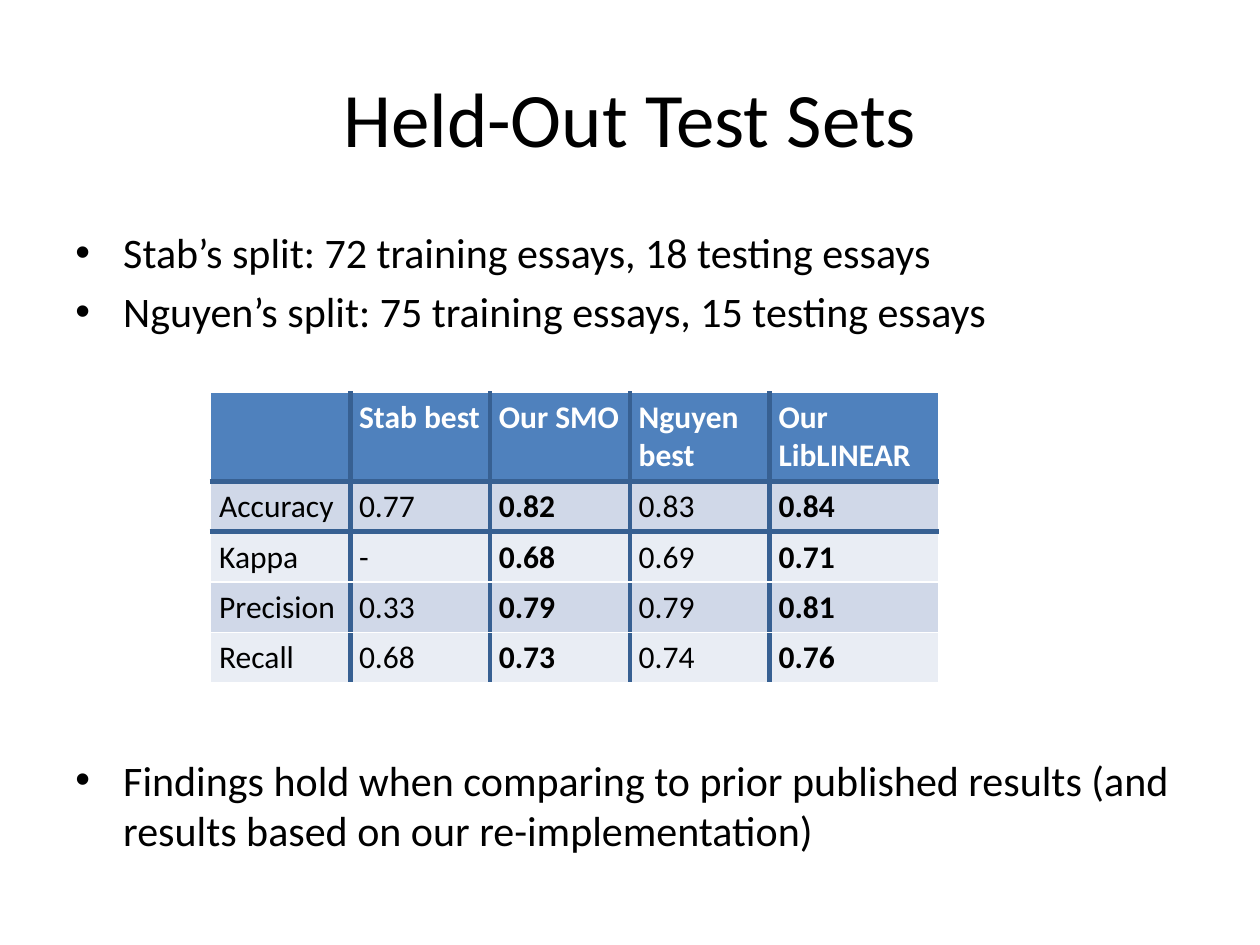
from lxml.etree import SubElement
from pptx import Presentation
from pptx.dml.color import RGBColor
from pptx.enum.text import MSO_ANCHOR, PP_ALIGN
from pptx.oxml.ns import qn
from pptx.util import Inches, Pt

TITLE = "Held-Out Test Sets"
# Bullet text and the space before it in points
BULLETS = [
    ("Stab’s split: 72 training essays, 18 testing essays", 4.8),
    ("Nguyen’s split: 75 training essays, 15 testing essays", 4.8),
    ("Findings hold when comparing to prior published results "
     "(and results based on our re-implementation)", 239),
]
RESULTS = [
    ["", "Stab best", "Our SMO", "Nguyen best", "Our LibLINEAR"],
    ["Accuracy", "0.77", "0.82", "0.83", "0.84"],
    ["Kappa", "-", "0.68", "0.69", "0.71"],
    ["Precision", "0.33", "0.79", "0.79", "0.81"],
    ["Recall", "0.68", "0.73", "0.74", "0.76"],
]
OUR_COLUMNS = (2, 4)
RULED_ROWS = (0, 1)  # rows with a heavy rule below
COLUMN_WIDTHS = [1.11] * 4 + [1.34]
ROW_HEIGHTS = [0.71] + [0.4] * 4
TABLE_LEFT, TABLE_TOP = 1.67, 3.11

THEME = {
    "font": "Calibri",
    "text": "000000",
    "white": "FFFFFF",
    "header": "4F81BD",
    "bands": ("E9EDF4", "D0D8E8"),
    "rule": "376092",
    "title_size": 44,
    "body_size": 24,
    "table_size": 18,
}


def add_run(paragraph, text, size, color=THEME["text"], bold=False):
    run = paragraph.add_run()
    run.text = text
    formats = {"name": THEME["font"], "size": Pt(size), "bold": bold}
    for name, value in formats.items():
        setattr(run.font, name, value)
    run.font.color.rgb = RGBColor.from_string(color)


def add_text_frame(slide, left, top, width, height, anchor):
    box = slide.shapes.add_textbox(*map(Inches, (left, top, width, height)))
    box.text_frame.word_wrap = True
    box.text_frame.vertical_anchor = anchor
    return box.text_frame


def add_bullet(paragraph):
    properties = paragraph._p.get_or_add_pPr()
    properties.set("marL", str(Inches(0.38)))
    properties.set("indent", str(-Inches(0.38)))
    SubElement(properties, qn("a:buFont"), typeface="Arial")
    SubElement(properties, qn("a:buChar"), char="•")


def set_border(cell, side, heavy):
    """Draw one side (L, R, T or B); call before the cell gets its fill."""
    width, color = (3, THEME["rule"]) if heavy else (1, THEME["white"])
    line = SubElement(cell._tc.get_or_add_tcPr(), qn(f"a:ln{side}"), w=str(Pt(width)))
    fill = SubElement(line, qn("a:solidFill"))
    SubElement(fill, qn("a:srgbClr"), val=color)


def format_cell(cell, row, column):
    heavy_sides = {
        "L": column > 0,
        "R": column < len(COLUMN_WIDTHS) - 1,
        "T": row - 1 in RULED_ROWS,
        "B": row in RULED_ROWS,
    }
    for side, heavy in heavy_sides.items():
        set_border(cell, side, heavy)
    margins = {"margin_left": 0.07, "margin_right": 0.07,
               "margin_top": 0.05, "margin_bottom": 0.05}
    for name, value in margins.items():
        setattr(cell, name, Inches(value))
    is_header = row == 0
    cell.fill.solid()
    cell.fill.fore_color.rgb = RGBColor.from_string(
        THEME["header"] if is_header else THEME["bands"][row % 2])
    add_run(cell.text_frame.paragraphs[0], RESULTS[row][column], THEME["table_size"],
            THEME["white"] if is_header else THEME["text"],
            is_header or column in OUR_COLUMNS)


def add_results_table(slide):
    table = slide.shapes.add_table(
        len(RESULTS), len(COLUMN_WIDTHS), Inches(TABLE_LEFT), Inches(TABLE_TOP),
        Inches(sum(COLUMN_WIDTHS)), Inches(sum(ROW_HEIGHTS))).table
    for column, width in zip(table.columns, COLUMN_WIDTHS):
        column.width = Inches(width)
    for row, height in zip(table.rows, ROW_HEIGHTS):
        row.height = Inches(height)
    for row in range(len(RESULTS)):
        for column in range(len(COLUMN_WIDTHS)):
            format_cell(table.cell(row, column), row, column)


def main():
    presentation = Presentation()
    presentation.slide_width, presentation.slide_height = Inches(10), Inches(7.5)
    slide = presentation.slides.add_slide(presentation.slide_layouts[6])

    title = add_text_frame(slide, 0.5, 0.3, 9, 1.25, MSO_ANCHOR.MIDDLE).paragraphs[0]
    title.alignment = PP_ALIGN.CENTER
    add_run(title, TITLE, THEME["title_size"])

    body = add_text_frame(slide, 0.5, 1.75, 9, 4.95, MSO_ANCHOR.TOP)
    for index, (text, space_before) in enumerate(BULLETS):
        paragraph = body.add_paragraph() if index else body.paragraphs[0]
        paragraph.space_before = Pt(space_before)
        add_bullet(paragraph)
        add_run(paragraph, text, THEME["body_size"])

    add_results_table(slide)
    presentation.save("out.pptx")


if __name__ == "__main__":
    main()
